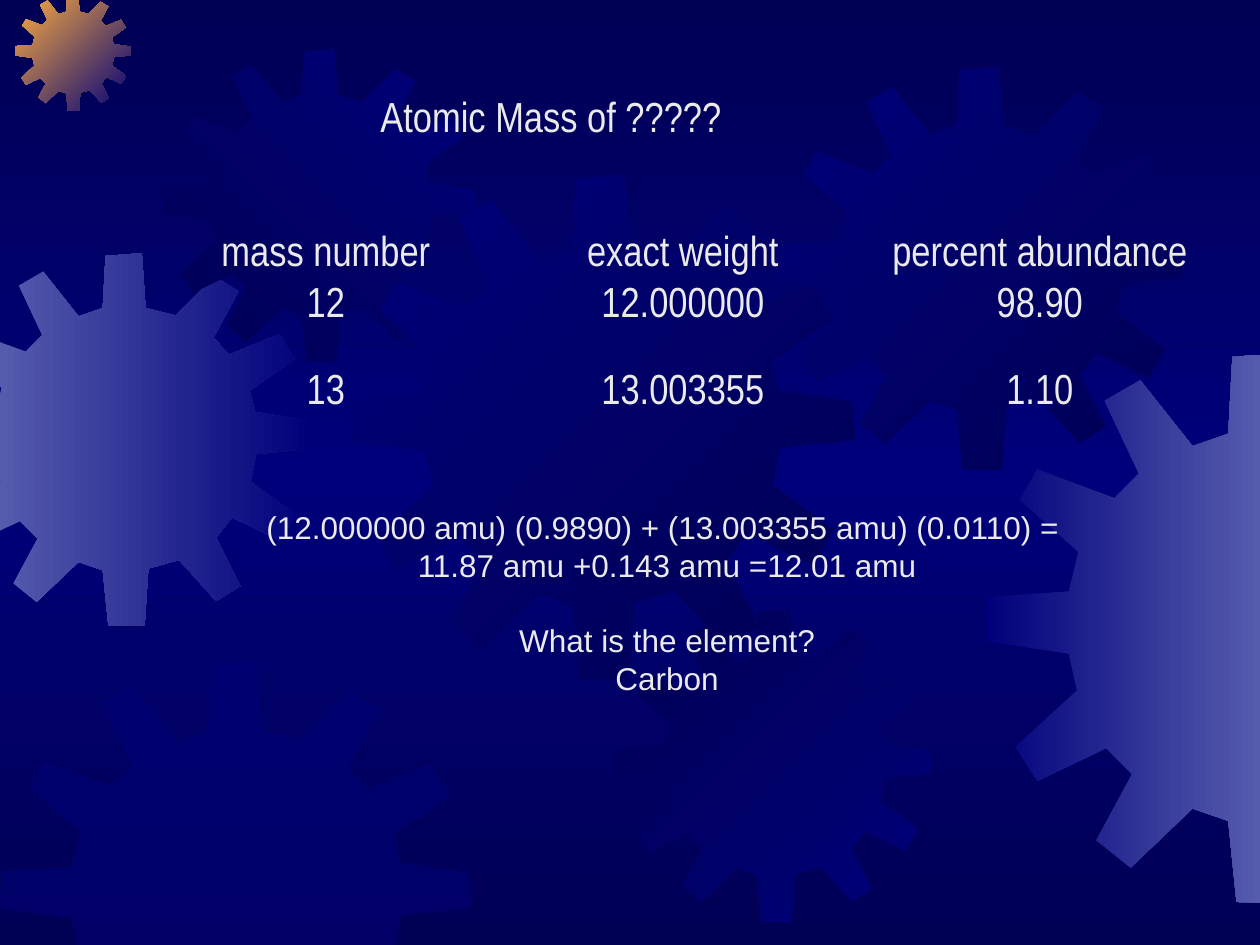
from copy import deepcopy

from lxml.etree import SubElement
from pptx import Presentation
from pptx.dml.color import RGBColor
from pptx.enum.text import MSO_ANCHOR as Anchor, MSO_AUTO_SIZE as AutoSize, PP_ALIGN as Align
from pptx.oxml.ns import qn
from pptx.util import Pt

WIDTH, HEIGHT = 720, 540
COLORS = {"night": "000054", "navy": "00007A", "steel": "555BAD",
          "orange": "FCAB40", "text": "EAEAEA"}
NO_GRID_STYLE = "{2D5ABB26-0587-4C30-8999-92F81FD0307C}"

TITLE = "Atomic Mass of ?????"
ISOTOPES = [
    ("mass number", "exact weight", "percent abundance"),
    ("12", "12.000000", "98.90"),
    ("13", "13.003355", "1.10"),
]
ROW_HEIGHTS = [28.8, 28.8, 71.28]
# text, space before
CALCULATION = [
    ("(12.000000 amu) (0.9890) + (13.003355 amu) (0.0110) = ", 0),
    ("11.87 amu +0.143 amu =12.01 amu", 0),
    ("What is the element?", 21.5),
    ("Carbon", 0),
]

# Outline of a twelve-toothed gear on a square grid of GEAR_GRID units
GEAR_GRID = 401
GEAR = [
    (255, 67), (223, 59), (219, 0), (180, 3), (177, 59), (151, 68),
    (113, 20), (87, 35), (112, 88), (94, 106), (38, 85), (25, 107),
    (68, 145), (61, 174), (1, 178), (0, 210), (61, 219), (67, 246),
    (22, 287), (38, 312), (88, 288), (107, 307), (81, 355), (106, 375),
    (151, 332), (177, 341), (183, 400), (222, 401), (226, 339), (259, 330),
    (299, 374), (325, 358), (299, 306), (316, 284), (368, 309), (384, 281),
    (336, 246), (342, 216), (401, 210), (400, 180), (341, 171), (335, 148),
    (383, 114), (367, 87), (313, 109), (296, 91), (323, 41), (297, 25),
]
# left, top, size, first colour, last colour, clockwise gradient angle (None: half-clear fill)
GEARS = [
    (-35.3, 144.7, 213.1, "steel", "navy", 0),
    (8.6, -3, 66.2, "orange", "navy", 45),
    (93.6, 28.1, 178.6, "night", "navy", 315),
    (199.4, 100.1, 288.9, "navy", "night", 45),
    (0, 378, 269.3, "navy", "navy", None),
    (353.5, 348.5, 178.6, "night", "navy", 45),
    (445, 38.2, 230.4, "navy", "night", 45),
    (563, 201.6, 314.6, "navy", "steel", 0),
]


def color(name):
    return RGBColor.from_string(COLORS[name])


def clip(points, axis, limit, sign):
    """Cut a polygon, keeping the side where sign * (coordinate - limit) >= 0."""
    kept = []
    for start, end in zip(points, points[1:] + points[:1]):
        before, after = (sign * (point[axis] - limit) for point in (start, end))
        if before >= 0:
            kept.append(start)
        if before * after < 0:
            share = before / (before - after)
            kept.append(tuple(a + share * (b - a) for a, b in zip(start, end)))
    return kept


def set_gradient(fill, first, last, angle):
    fill.gradient()
    fill.gradient_angle = -angle % 360
    for stop, name in zip(fill.gradient_stops, (first, last)):
        stop.color.rgb = color(name)


def add_gear(slide, left, top, size, first, last, angle):
    points = [(left + x * size / GEAR_GRID, top + y * size / GEAR_GRID) for x, y in GEAR]
    for axis, limit, sign in [(0, 0, 1), (0, WIDTH, -1), (1, 0, 1), (1, HEIGHT, -1)]:
        points = clip(points, axis, limit, sign)
    points = [(Pt(x), Pt(y)) for x, y in points]
    builder = slide.shapes.build_freeform(*points[0])
    builder.add_line_segments(points[1:], close=True)
    gear = builder.convert_to_shape()
    gear.shadow.inherit = False
    gear.line.fill.background()
    if angle is None:
        gear.fill.solid()
        gear.fill.fore_color.rgb = color(first)
        SubElement(next(gear.element.iter(qn("a:srgbClr"))), qn("a:alpha"), val="50000")
    else:
        set_gradient(gear.fill, first, last, angle)


def style(para, font, size, align=Align.CENTER):
    para.alignment = align
    para.font.name = font
    para.font.size = Pt(size)
    para.font.color.rgb = color("text")


def paint_background(slide):
    set_gradient(slide.background.fill, "night", "night", 90)
    stops = next(slide.element.iter(qn("a:gsLst")))
    middle = deepcopy(stops[0])
    middle.set("pos", "50000")
    next(middle.iter(qn("a:srgbClr"))).set("val", COLORS["navy"])
    stops.insert(1, middle)


def add_title(slide):
    title = slide.shapes.title
    title.left, title.top, title.width, title.height = Pt(210.2), Pt(48.2), Pt(211.7), Pt(36)
    frame = title.text_frame
    frame.text = TITLE
    frame.word_wrap = False
    frame.auto_size = AutoSize.SHAPE_TO_FIT_TEXT
    frame.vertical_anchor = Anchor.TOP
    style(frame.paragraphs[0], "Arial Narrow", 24, Align.LEFT)
    slide.shapes.element.append(title.element)  # in front of the gears


def add_isotope_table(slide):
    frame = slide.shapes.add_table(len(ISOTOPES), len(ISOTOPES[0]), Pt(84.2), Pt(131.8),
                                   Pt(612), Pt(sum(ROW_HEIGHTS)))
    table = frame.table
    table.first_row = table.horz_banding = False
    next(frame.element.iter(qn("a:tableStyleId"))).text = NO_GRID_STYLE
    for row, height, texts in zip(table.rows, ROW_HEIGHTS, ISOTOPES):
        row.height = Pt(height)
        for cell, text in zip(row.cells, texts):
            cell.text = text
            cell.fill.background()
            cell.margin_top = cell.margin_bottom = 0
            cell.vertical_anchor = Anchor.MIDDLE
            style(cell.text_frame.paragraphs[0], "Arial Narrow", 24)


def add_calculation(slide):
    box = slide.shapes.add_textbox(Pt(126.7), Pt(286.6), Pt(509), Pt(138.2))
    frame = box.text_frame
    frame.word_wrap = True
    frame.auto_size = AutoSize.SHAPE_TO_FIT_TEXT
    for index, (text, space) in enumerate(CALCULATION):
        para = frame.add_paragraph() if index else frame.paragraphs[0]
        para.text = text
        if space:
            para.space_before = Pt(space)
        style(para, "Arial", 18)


def main():
    deck = Presentation()
    deck.slide_width, deck.slide_height = Pt(WIDTH), Pt(HEIGHT)
    slide = deck.slides.add_slide(deck.slide_layouts[5])
    paint_background(slide)
    for gear in GEARS:
        add_gear(slide, *gear)
    add_isotope_table(slide)
    add_calculation(slide)
    add_title(slide)
    deck.save("out.pptx")


if __name__ == "__main__":
    main()
